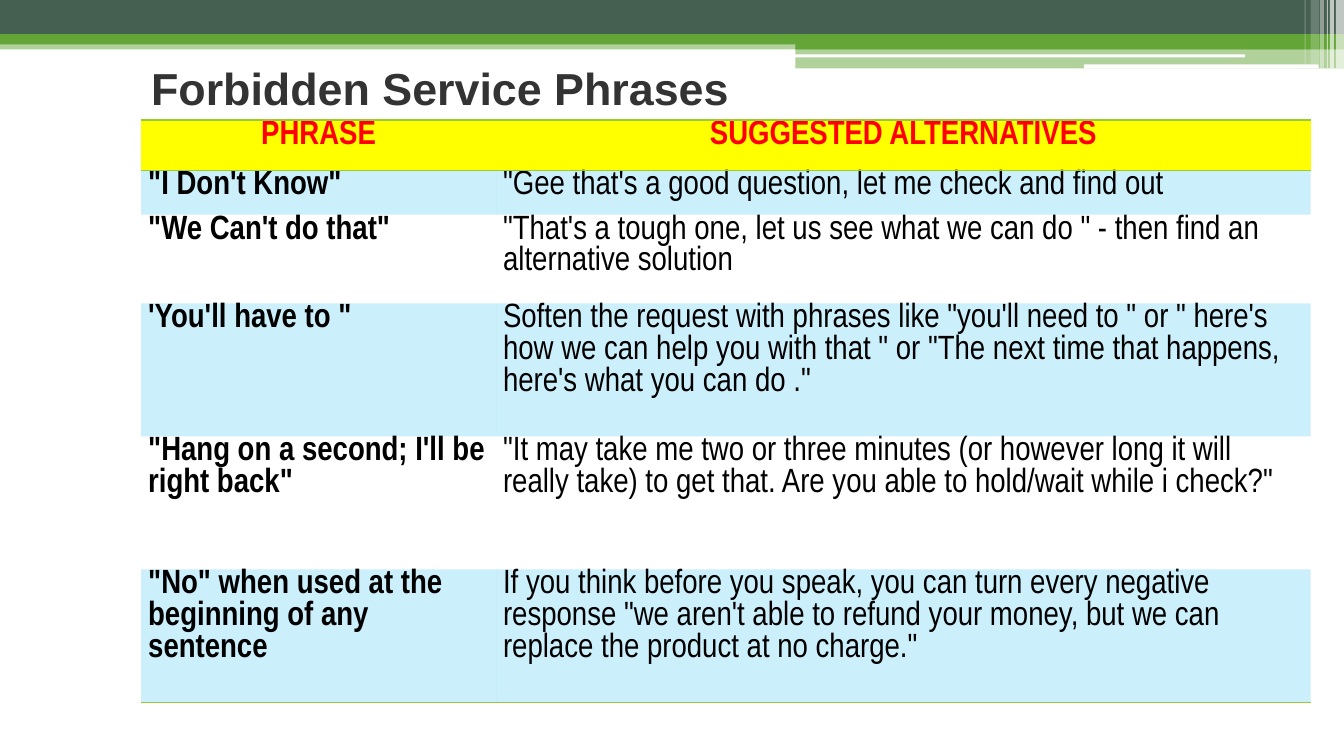
from lxml import etree
from pptx import Presentation
from pptx import util as u
from pptx.dml.color import RGBColor
from pptx.enum import shapes, text
from pptx.oxml.ns import qn

DARK = RGBColor(0x45, 0x5F, 0x51)
GREEN = RGBColor(0x63, 0xA5, 0x37)
LIME = RGBColor(0x99, 0xCB, 0x38)
WHITE = RGBColor(0xFF, 0xFF, 0xFF)
GREY = RGBColor(0x33, 0x33, 0x33)
BLACK = RGBColor(0, 0, 0)
RED = RGBColor(0xFF, 0, 0)
YELLOW = RGBColor(0xFF, 0xFF, 0)
BLUE = RGBColor(0, 0xB0, 0xF0)
NO_STYLE = "{2D5ABB26-0587-4C30-8999-92F81FD0307C}"

prs = Presentation()
prs.slide_width, prs.slide_height = u.Inches(13.33), u.Inches(7.5)
s = prs.slides.add_slide(prs.slide_layouts[6])

# Grid of 1333 columns by 750 rows
COL = prs.slide_width / 1333
ROW = prs.slide_height / 750


def paint(fill, color, opacity=100):
    fill.solid()
    fill.fore_color.rgb = color
    if opacity < 100:
        clr = fill._xPr.find(qn("a:solidFill"))[0]
        etree.SubElement(clr, qn("a:alpha")).set("val", str(opacity * 1000))


def add_run(p, words, size, font, color, bold):
    r = p.add_run()
    r.text = words
    r.font.size, r.font.name = u.Pt(size), font
    r.font.color.rgb, r.font.bold = color, bold


# Header bands, white slots and vertical stripes
RECT = shapes.MSO_SHAPE.RECTANGLE
ROUND = shapes.MSO_SHAPE.ROUNDED_RECTANGLE
bands = [
    (RECT, 0, 40, 1333, 9, GREEN, 50),
    (RECT, 0, 0, 1333, 34, DARK, 100),
    (RECT, 0, 34, 1333, 10, GREEN, 100),
    (RECT, 789, 39, 544, 10, GREEN, 100),
    (RECT, 789, 48, 544, 20, GREEN, 50),
    (ROUND, 788, 54, 447, 3, WHITE, 100),
    (ROUND, 1075, 64, 233, 4, WHITE, 100),
]
stripes = [(1325, 8, 68, 65), (1319, 4, 68, 65), (1316, 1, 68, 60),
           (1309, 4, 68, 40), (1300, 8, 64, 20), (1294, 1, 64, 30)]
bands += [(RECT, x, 0, w, h, WHITE, a) for x, w, h, a in stripes]
for kind, x, y, w, h, color, opacity in bands:
    sp = s.shapes.add_shape(kind, int(x * COL), int(y * ROW), int(w * COL), int(h * ROW))
    sp.shadow.inherit = False
    sp.line.fill.background()
    paint(sp.fill, color, opacity)

# Title
sp = s.shapes.add_textbox(int(140 * COL), int(55 * ROW), int(598 * COL), int(64 * ROW))
tf = sp.text_frame
tf.word_wrap = False
tf.auto_size = text.MSO_AUTO_SIZE.SHAPE_TO_FIT_TEXT
add_run(tf.paragraphs[0], "Forbidden Service Phrases", 32, "Arial", GREY, True)

# Table of phrases
phrases = [
    ("PHRASE", "SUGGESTED ALTERNATIVES"),
    ('"I Don\'t Know"', '"Gee that\'s a good question, let me check and find out'),
    ('"We Can\'t do that"',
     '"That\'s a tough one, let us see what we can do " - then find an alternative solution'),
    ("'You'll have to \"",
     'Soften the request with phrases like "you\'ll need to " or " here\'s how we can help '
     'you with that " or "The next time that happens, here\'s what you can do ."'),
    ('"Hang on a second; I\'ll be right back"',
     '"It may take me two or three minutes (or however long it will really take) to get '
     'that. Are you able to hold/wait while i check?"'),
    ('"No" when used at the beginning of any sentence',
     'If you think before you speak, you can turn every negative response "we aren\'t able '
     'to refund your money, but we can replace the product at no charge."'),
]
widths = [352, 808]
heights = [50, 44, 88, 132, 132, 132]
last = len(phrases) - 1
table = s.shapes.add_table(len(heights), len(widths), int(140 * COL), int(119 * ROW),
                           int(sum(widths) * COL), int(sum(heights) * ROW)).table
table.first_row = table.horz_banding = False
table._tbl.tblPr.find(qn("a:tableStyleId")).text = NO_STYLE
for column, w in zip(table.columns, widths):
    column.width = int(w * COL)
for row, h in zip(table.rows, heights):
    row.height = int(h * ROW)

for i, pair in enumerate(phrases):
    header = i == 0
    for j, words in enumerate(pair):
        cell = table.cell(i, j)
        cell.margin_left = cell.margin_right = int(7 * COL)
        cell.margin_top = cell.margin_bottom = 0
        p = cell.text_frame.paragraphs[0]
        if header:
            p.alignment, p.space_after = text.PP_ALIGN.CENTER, u.Pt(7.5)
        add_run(p, words, 24, "Arial Narrow", RED if header else BLACK, header or j == 0)

        # Yellow header, then every other row tinted
        if header:
            paint(cell.fill, YELLOW)
        elif i % 2:
            paint(cell.fill, BLUE, 20)
        else:
            cell.fill.background()

        # Rules around the header and under the last row
        edges = {0: ("a:lnT", "a:lnB"), last: ("a:lnB",)}.get(i, ())
        for k, edge in enumerate(edges):
            ln = etree.Element(qn(edge), w=str(u.Pt(1)))
            solid = etree.SubElement(ln, qn("a:solidFill"))
            etree.SubElement(solid, qn("a:srgbClr")).set("val", str(LIME))
            cell._tc.tcPr.insert(k, ln)

prs.save("out.pptx")
